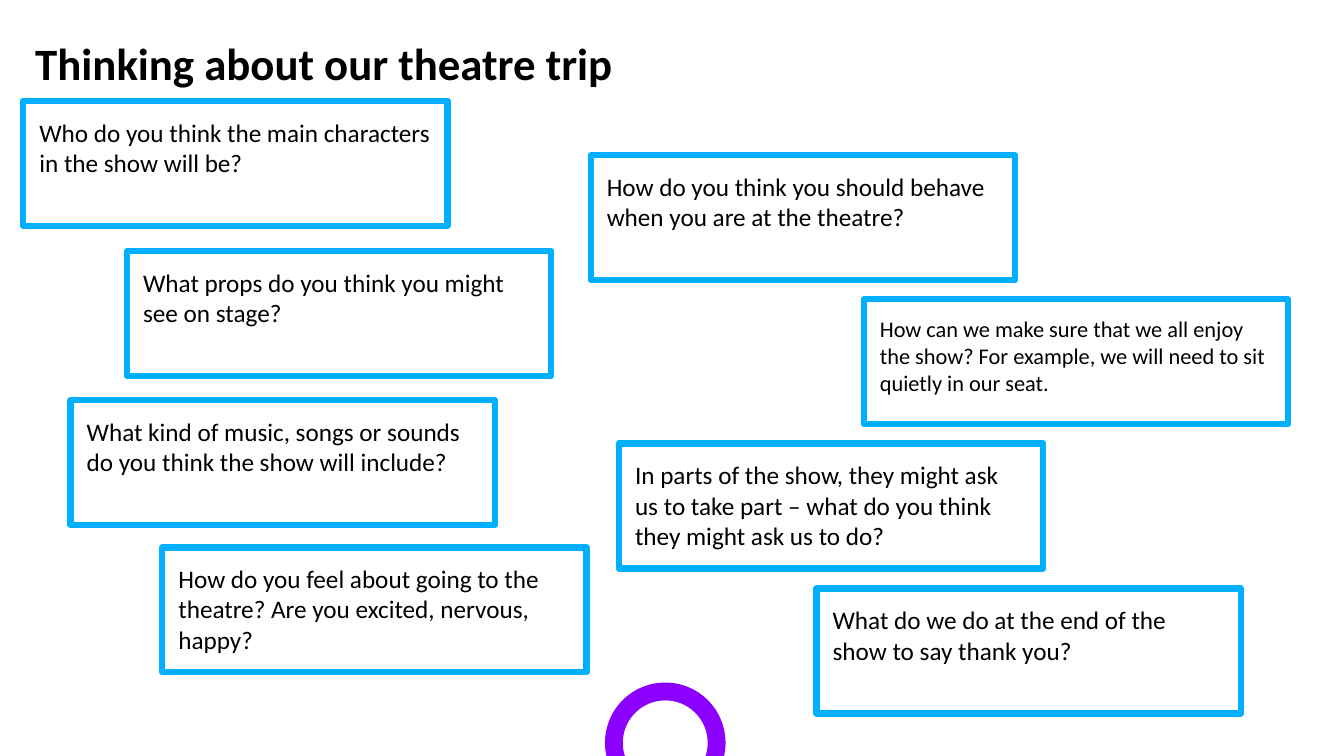
from pptx import Presentation
from pptx.dml.color import RGBColor
from pptx.enum import shapes, text
from pptx.util import Pt

COLORS = {"text": "000000", "box": "FFFFFF", "border": "00B0FF", "ring": "8C00FF"}
BOX_WIDTH, BOX_HEIGHT, BOX_INSET = 303.1, 89.3, 11.5

# left, top, font size, question
QUESTIONS = [
    (16.6, 72, 18, "Who do you think the main characters in the show will be?"),
    (90.7, 179.3, 18, "What props do you think you might see on stage?"),
    (50.4, 285.8, 18, "What kind of music, songs or sounds do you think the show will include?"),
    (115.9, 391, 18, "How do you feel about going to the theatre? Are you excited, nervous, happy?"),
    (421.9, 110.9, 18, "How do you think you should behave when you are at the theatre?"),
    (617, 213.8, 16, "How can we make sure that we all enjoy the show? "
                     "For example, we will need to sit quietly in our seat."),
    (442.1, 316.8, 18, "In parts of the show, they might ask us to take part – "
                       "what do you think they might ask us to do?"),
    (583.2, 420.5, 18, "What do we do at the end of the show to say thank you?"),
]


def outlined(kind, left, top, width, height, color, weight):
    sp = s.shapes.add_shape(kind, Pt(left), Pt(top), Pt(width), Pt(height))
    sp.shadow.inherit = False
    sp.line.color.rgb = RGBColor.from_string(COLORS[color])
    sp.line.width = Pt(weight)
    return sp


def write(sp, content, size, inset_x, inset_y):
    """Fill a shape with one left-aligned, top-anchored paragraph."""
    tf = sp.text_frame
    tf.word_wrap = True
    tf.vertical_anchor = text.MSO_ANCHOR.TOP
    tf.margin_left = tf.margin_right = Pt(inset_x)
    tf.margin_top = tf.margin_bottom = Pt(inset_y)
    p = tf.paragraphs[0]
    p.text = content
    p.alignment = text.PP_ALIGN.LEFT
    p.font.name = "Calibri"
    p.font.size = Pt(size)
    p.font.color.rgb = RGBColor.from_string(COLORS["text"])
    return p


prs = Presentation()
prs.slide_width, prs.slide_height = Pt(960), Pt(540)
s = prs.slides.add_slide(prs.slide_layouts[6])

ring = outlined(shapes.MSO_SHAPE.OVAL, 438.5, 493.9, 73.4, 73.4, "ring", 12.75)
ring.fill.background()

title = s.shapes.add_textbox(Pt(25.2), Pt(26.6), Pt(693.4), Pt(45.4))
p = write(title, "Thinking about our theatre trip", 32, 0, 3.6)
p.font.bold = True
p.line_spacing = 0.9

for left, top, size, question in QUESTIONS:
    box = outlined(shapes.MSO_SHAPE.RECTANGLE, left, top, BOX_WIDTH, BOX_HEIGHT, "border", 4.5)
    box.fill.solid()
    box.fill.fore_color.rgb = RGBColor.from_string(COLORS["box"])
    p = write(box, question, size, BOX_INSET, BOX_INSET)
    p.space_after = Pt(10)

prs.save("out.pptx")
